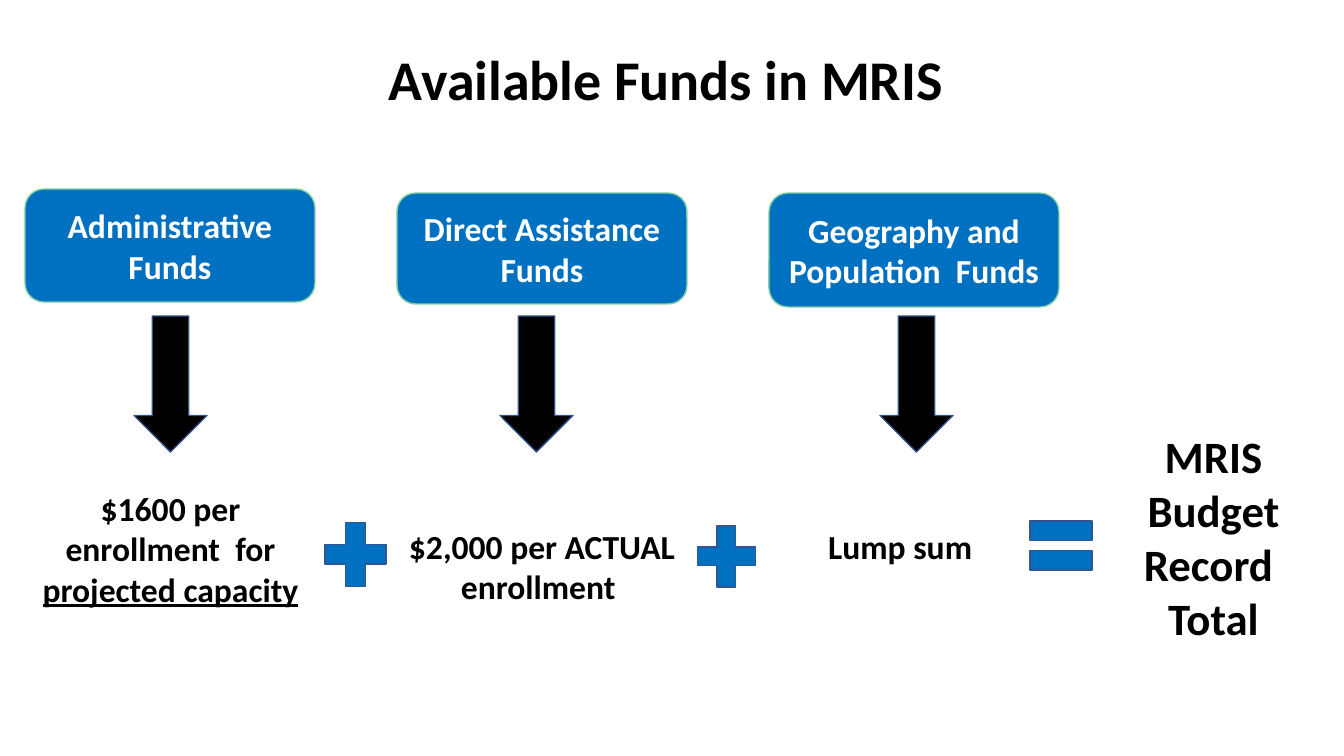
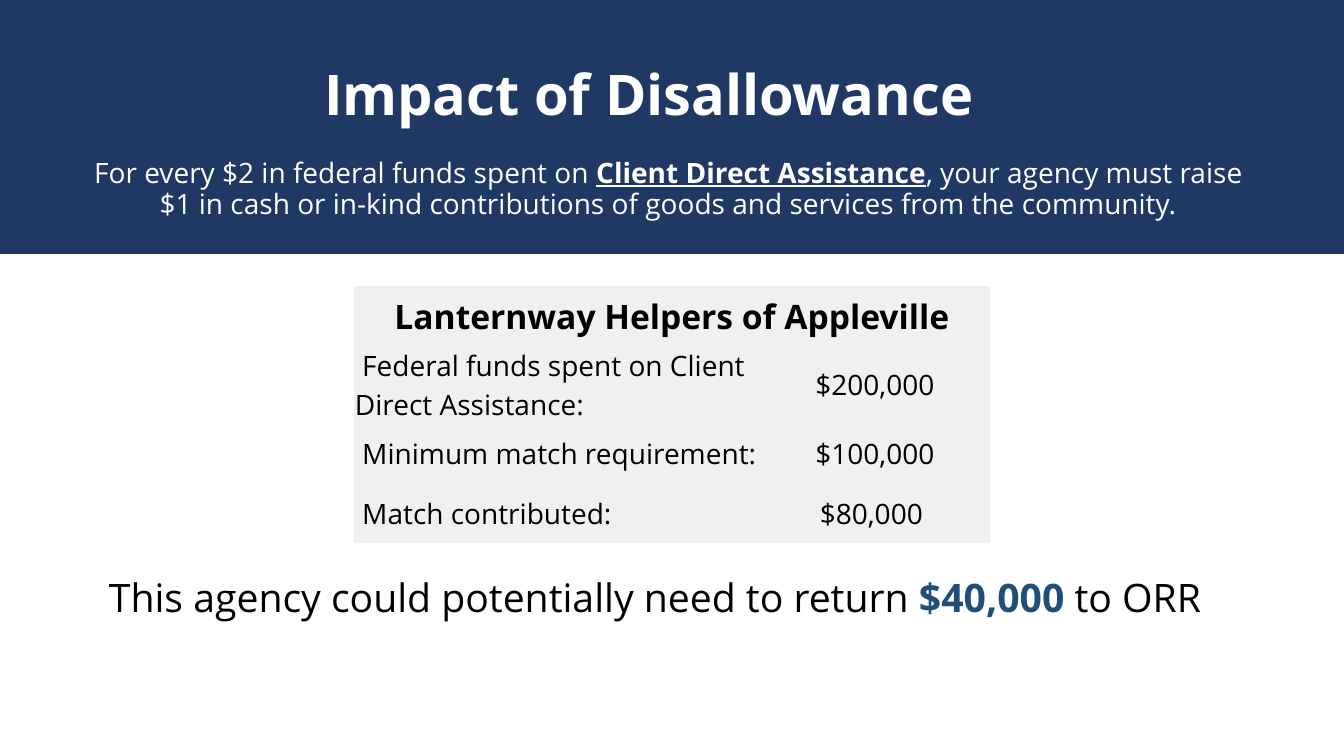
from lxml.etree import SubElement
from pptx import Presentation
from pptx.dml.color import RGBColor
from pptx.enum.shapes import MSO_SHAPE as Shape
from pptx.enum.text import MSO_ANCHOR as Anchor, MSO_AUTO_SIZE as AutoSize, PP_ALIGN as Align
from pptx.oxml.ns import qn
from pptx.util import Pt

EMU_PER_PX = 914400 / 100.8
PAGE_SIZE = (1344, 756)
NO_TABLE_STYLE = "{2D5ABB26-0587-4C30-8999-92F81FD0307C}"

THEME = {
    "colors": {
        "ink": "000000", "white": "FFFFFF", "blue": "0070C0", "mint": "84D1A5",
        "edge": "325491", "navy": "203864", "accent": "1F4E79", "panel": "F0F0F0",
    },
    "sizes": {"title": 40, "total": 32, "result": 28, "heading": 24, "body": 20},
    "fonts": {"funds": "Calibri", "impact": "Open Sans"},
}

UNDERLINED = {"underline": True}
STRONG = {"bold": True}

FUNDS_TITLE = "Available Funds in MRIS"
FUNDS = [
    {"name": "Administrative Funds", "head": (25, 189, 290, 113), "arrow": 134,
     "note": [("$1600 per enrollment\u00a0 for ", {}), ("projected capacity", UNDERLINED)],
     "note_at": (15, 483, 311, 132)},
    {"name": "Direct Assistance Funds", "head": (397, 193, 290, 111), "arrow": 500,
     "note": [("$2,000 per ACTUAL enrollment\u00a0", {})],
     "note_at": (387, 521, 310, 92)},
    {"name": "Geography and Population\u00a0 Funds", "head": (769, 193, 290, 114), "arrow": 880,
     "note": [("Lump sum ", {})],
     "note_at": (771, 521, 266, 50)},
]
SIGNS = [
    (Shape.MATH_PLUS, (314, 511, 83, 87)),
    (Shape.MATH_PLUS, (687, 515, 79, 83)),
    (Shape.MATH_EQUAL, (1019, 504, 84, 83)),
]
TOTAL = [[("MRIS Budget Record\u00a0", {})], [("Total", {})]]

IMPACT_TITLE = "Impact of Disallowance"
RULE = [
    [("For every $2 in federal funds spent on ", {}),
     ("Client Direct Assistance", STRONG | UNDERLINED),
     (", your agency must raise ", {})],
    [("$1 in cash or in-kind contributions of goods and services from the community.\u00a0", {})],
]
AGENCY = "Lanternway Helpers of Appleville"
AMOUNTS = [
    (" Federal funds spent on Client Direct Assistance:", "$200,000"),
    (" Minimum match requirement:", "$100,000"),
    (" Match contributed:", "$80,000 "),
]
TABLE_AT = (354, 286, 636, 251)
COLUMN_WIDTHS = (406, 230)
ROW_HEIGHT = 60
RESULT = [[
    ("This agency could potentially need to return ", {}),
    ("$40,000 ", STRONG | {"color": "accent"}),
    ("to ORR", {}),
]]


def px(length):
    return round(length * EMU_PER_PX)


def color(name):
    return RGBColor.from_string(THEME["colors"][name])


def style(font, size, color_name="ink", bold=False):
    return {"name": THEME["fonts"][font], "size": Pt(THEME["sizes"][size]),
            "color": color_name, "bold": bold}


def write(frame, paragraphs, look, align=Align.CENTER, spacing=1.0):
    for index, spans in enumerate(paragraphs):
        para = frame.paragraphs[0] if index == 0 else frame.add_paragraph()
        para.alignment = align
        para.line_spacing = spacing
        para.space_before = Pt(0)
        for text, changes in spans:
            span = para.add_run()
            span.text = text
            for key, value in (look | changes).items():
                if key == "color":
                    span.font.color.rgb = color(value)
                else:
                    setattr(span.font, key, value)


def place(box, at, anchor):
    for key, length in zip(("left", "top", "width", "height"), at):
        setattr(box, key, px(length))
    frame = box.text_frame
    for key, value in {"word_wrap": True, "auto_size": AutoSize.NONE,
                       "vertical_anchor": anchor}.items():
        setattr(frame, key, value)
    return frame


def add_text(page, at, paragraphs, look, align=Align.CENTER, anchor=Anchor.TOP):
    box = page.shapes.add_textbox(0, 0, 0, 0)
    write(place(box, at, anchor), paragraphs, look, align)


def add_figure(page, kind, at, fill, line=None):
    figure = page.shapes.add_shape(kind, *map(px, at))
    figure.shadow.inherit = False
    figure.fill.solid()
    figure.fill.fore_color.rgb = color(fill)
    if line:
        figure.line.color.rgb = color(line)
        figure.line.width = Pt(1)
    else:
        figure.line.fill.background()
    return figure


def set_title(page, text, at, look, align=Align.CENTER):
    write(place(page.shapes.title, at, Anchor.MIDDLE), [[(text, {})]], look, align)


def build_funds(deck):
    page = deck.slides.add_slide(deck.slide_layouts[5])
    set_title(page, FUNDS_TITLE, (84, 39, 1164, 78), style("funds", "title", bold=True))
    head_look = style("funds", "heading", "white", True)
    note_look = style("funds", "heading", bold=True)
    for fund in FUNDS:
        head = add_figure(page, Shape.FLOWCHART_ALTERNATE_PROCESS, fund["head"], "blue", "mint")
        write(place(head, fund["head"], Anchor.MIDDLE), [[(fund["name"], {})]], head_look)
        add_figure(page, Shape.DOWN_ARROW, (fund["arrow"], 316, 73, 136), "ink", "edge")
        add_text(page, fund["note_at"], [fund["note"]], note_look)
    for kind, at in SIGNS:
        add_figure(page, kind, at, "blue", "edge")
    add_text(page, (1088, 424, 251, 228), TOTAL, style("funds", "total", bold=True))


def fill_cell(cell, text, look, align):
    cell.fill.solid()
    cell.fill.fore_color.rgb = color("panel")
    for key, value in {"margin_left": px(1), "margin_right": px(1), "margin_top": px(1),
                       "margin_bottom": 0, "vertical_anchor": Anchor.MIDDLE}.items():
        setattr(cell, key, value)
    write(cell.text_frame, [[(text, {})]], look, align)


def add_amounts(page):
    holder = page.shapes.add_table(len(AMOUNTS) + 1, 2, *map(px, TABLE_AT))
    table = holder.table
    table.first_row = table.horz_banding = False
    table._tbl.tblPr.find(qn("a:tableStyleId")).text = NO_TABLE_STYLE
    for column, width in zip(table.columns, COLUMN_WIDTHS):
        column.width = px(width)
    for row in table.rows:
        row.height = px(ROW_HEIGHT)
    holder.height = px(TABLE_AT[3])
    table.cell(0, 0).merge(table.cell(0, 1))
    fill_cell(table.cell(0, 0), AGENCY, style("impact", "heading", bold=True), Align.CENTER)
    for row, texts in enumerate(AMOUNTS, 1):
        for column, (text, align) in enumerate(zip(texts, (Align.LEFT, Align.CENTER))):
            fill_cell(table.cell(row, column), text, style("impact", "body"), align)


def build_impact(deck):
    page = deck.slides.add_slide(deck.slide_layouts[1])
    band = add_figure(page, Shape.RECTANGLE, (0, 0, PAGE_SIZE[0], 254), "navy")
    page.shapes._spTree.insert(2, band._element)
    set_title(page, IMPACT_TITLE, (314, 54, 697, 78),
              style("impact", "title", "white", True), Align.LEFT)
    frame = place(page.placeholders[1], (0, 124, PAGE_SIZE[0], 131), Anchor.MIDDLE)
    write(frame, RULE, style("impact", "body", "white"), spacing=0.94)
    for para in frame.paragraphs:
        props = para._p.get_or_add_pPr()
        props.set("marL", "0")
        props.set("indent", "0")
        SubElement(props, qn("a:buNone"))
    add_amounts(page)
    add_text(page, (99, 568, 1146, 57), RESULT, style("impact", "result"),
             Align.LEFT, Anchor.MIDDLE)


def main():
    deck = Presentation()
    deck.slide_width, deck.slide_height = map(px, PAGE_SIZE)
    build_funds(deck)
    build_impact(deck)
    deck.save("out.pptx")


if __name__ == "__main__":
    main()
